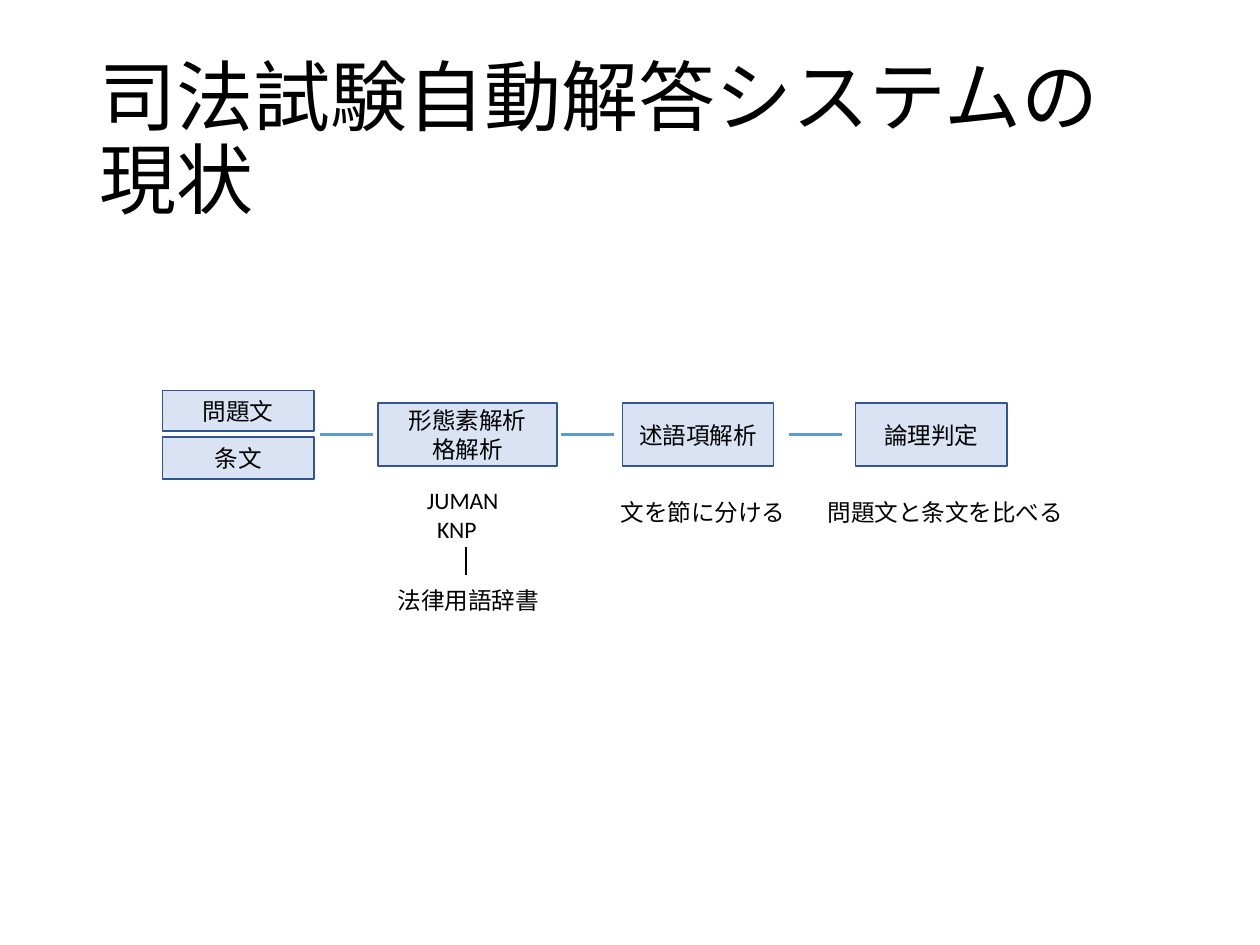
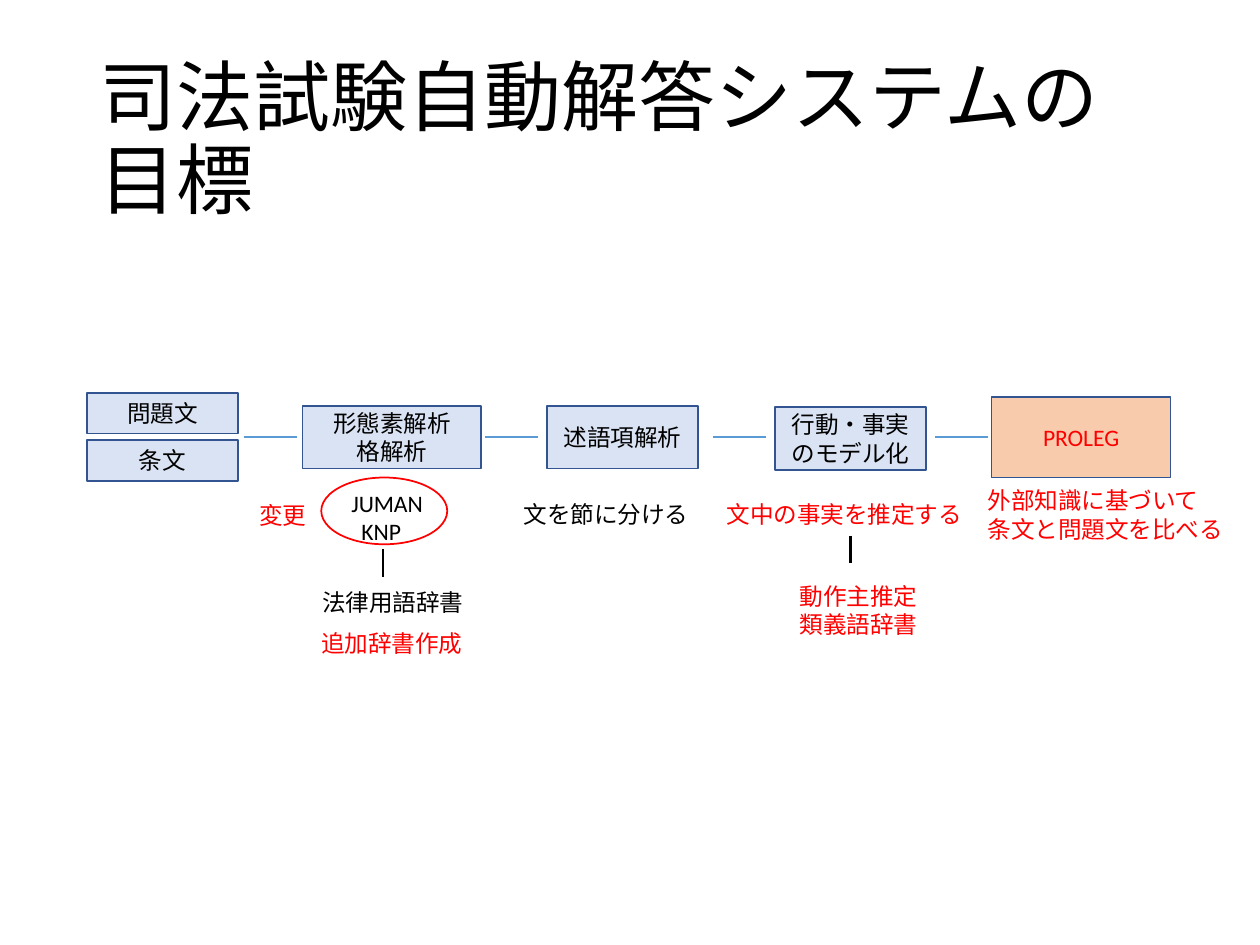
from pptx import Presentation
from pptx.dml.color import RGBColor as Rgb
from pptx.enum.shapes import MSO_CONNECTOR as Link, MSO_SHAPE as Kind
from pptx.enum.text import MSO_ANCHOR as Anchor, MSO_AUTO_SIZE as Fit, PP_ALIGN as Align
from pptx.util import Inches, Pt
from lxml.etree import SubElement
from pptx.oxml.ns import qn

HUES = {"ink": "000000", "red": "FF0000", "box": "DAE3F3",
        "goal": "F8CBAD", "edge": "325491", "link": "5B9BD5"}
FONT = "Calibri"
SIZE = 13.5
STEP_W, WIDE_W, STEP_H = 1.2, 1.42, 0.5
LINK_W, STEM_H = 0.42, 0.22


def hue(name):
    return Rgb.from_string(HUES[name])


def write(frame, lines, size=SIZE, color="ink", align=Align.LEFT):
    frame.text = "\n".join(lines)
    for para in frame.paragraphs:
        para.alignment = align
        para.font.name = FONT
        para.font.size = Pt(size)
        para.font.color.rgb = hue(color)


def add_title(slide, text):
    frame = slide.shapes.add_textbox(Inches(0.69), Inches(0.4), Inches(8.62), Inches(1.45)).text_frame
    frame.word_wrap = True
    frame.vertical_anchor = Anchor.MIDDLE
    write(frame, [text], 44)
    frame.paragraphs[0].line_spacing = 0.9


def add_form(slide, kind, x, y, w, h, edge, fill=None):
    form = slide.shapes.add_shape(kind, Inches(x), Inches(y), Inches(w), Inches(h))
    form.shadow.inherit = False
    form.line.color.rgb = hue(edge)
    form.line.width = Pt(1)
    if fill:
        form.fill.solid()
        form.fill.fore_color.rgb = hue(fill)
    else:
        form.fill.background()
    return form


def add_step(slide, x, y, *lines, w=STEP_W, h=STEP_H, fill="box", color="ink"):
    frame = add_form(slide, Kind.RECTANGLE, x, y, w, h, "edge", fill).text_frame
    frame.vertical_anchor = Anchor.MIDDLE
    write(frame, lines, color=color, align=Align.CENTER)


def add_note(slide, x, y, w, *lines, color="ink"):
    h = 0.33 if len(lines) == 1 else 0.56
    frame = slide.shapes.add_textbox(Inches(x), Inches(y), Inches(w), Inches(h)).text_frame
    frame.word_wrap = False
    frame.auto_size = Fit.SHAPE_TO_FIT_TEXT
    write(frame, lines, color=color)
    return frame


def add_line(slide, x, y, dx, dy, color, width):
    line = slide.shapes.add_connector(Link.STRAIGHT, Inches(x), Inches(y), Inches(x + dx), Inches(y + dy))
    line.line.color.rgb = hue(color)
    line.line.width = Pt(width)
    SubElement(line._element.spPr, qn("a:effectLst"))


def add_link(slide, x, y):
    add_line(slide, x, y, LINK_W, 0, "link", 1.5)


def add_stem(slide, x, y):
    add_line(slide, x, y, 0, STEM_H, "ink", 1.25)


def add_flow(slide, x, y):
    add_step(slide, x, y, "問題文", h=0.32)
    add_step(slide, x, y + 0.37, "条文", h=0.33)
    add_step(slide, x + 1.71, y + 0.1, "形態素解析", "格解析", w=WIDE_W)
    add_step(slide, x + 3.65, y + 0.1, "述語項解析")
    for dx in (1.25, 3.16, 4.97):
        add_link(slide, x + dx, y + 0.35)
    tools = add_note(slide, x + 2, y + 0.71, 0.78, "JUMAN", "KNP")
    tools.paragraphs[1]._p.get_or_add_pPr().set("marL", str(Inches(0.08)))
    add_note(slide, x + 1.77, y + 1.5, 1.34, "法律用語辞書")


def add_now(slide):
    add_title(slide, "司法試験自動解答システムの現状")
    add_flow(slide, 1.29, 3.1)
    add_step(slide, 6.79, 3.2, "論理判定")
    add_note(slide, 4.83, 3.9, 1.53, "文を節に分ける")
    add_note(slide, 6.47, 3.9, 2.1, "問題文と条文を比べる")
    add_stem(slide, 3.7, 4.34)


def add_goal(slide):
    add_title(slide, "司法試験自動解答システムの目標")
    add_flow(slide, 0.69, 3.12)
    add_step(slide, 6.15, 3.23, "行動・事実のモデル化")
    add_link(slide, 7.42, 3.47)
    add_step(slide, 7.87, 3.15, "PROLEG", w=WIDE_W, h=0.64, fill="goal", color="red")
    add_note(slide, 4.06, 3.92, 1.53, "文を節に分ける")
    for x, y, w, *lines in (
        (1.96, 3.93, 0.58, "変更"),
        (2.45, 4.94, 1.34, "追加辞書作成"),
        (5.67, 3.92, 2.1, "文中の事実を推定する"),
        (6.25, 4.57, 1.15, "動作主推定", "類義語辞書"),
        (7.74, 3.81, 2.1, "外部知識に基づいて", "条文と問題文を比べる"),
    ):
        add_note(slide, x, y, w, *lines, color="red")
    add_form(slide, Kind.OVAL, 2.55, 3.79, 1, 0.53, "red")
    add_stem(slide, 3.04, 4.36)
    add_stem(slide, 6.75, 4.25)


def main():
    deck = Presentation()
    deck.slide_width, deck.slide_height = Inches(10), Inches(7.5)
    for build in (add_now, add_goal):
        build(deck.slides.add_slide(deck.slide_layouts[6]))
    deck.save("out.pptx")


if __name__ == "__main__":
    main()
